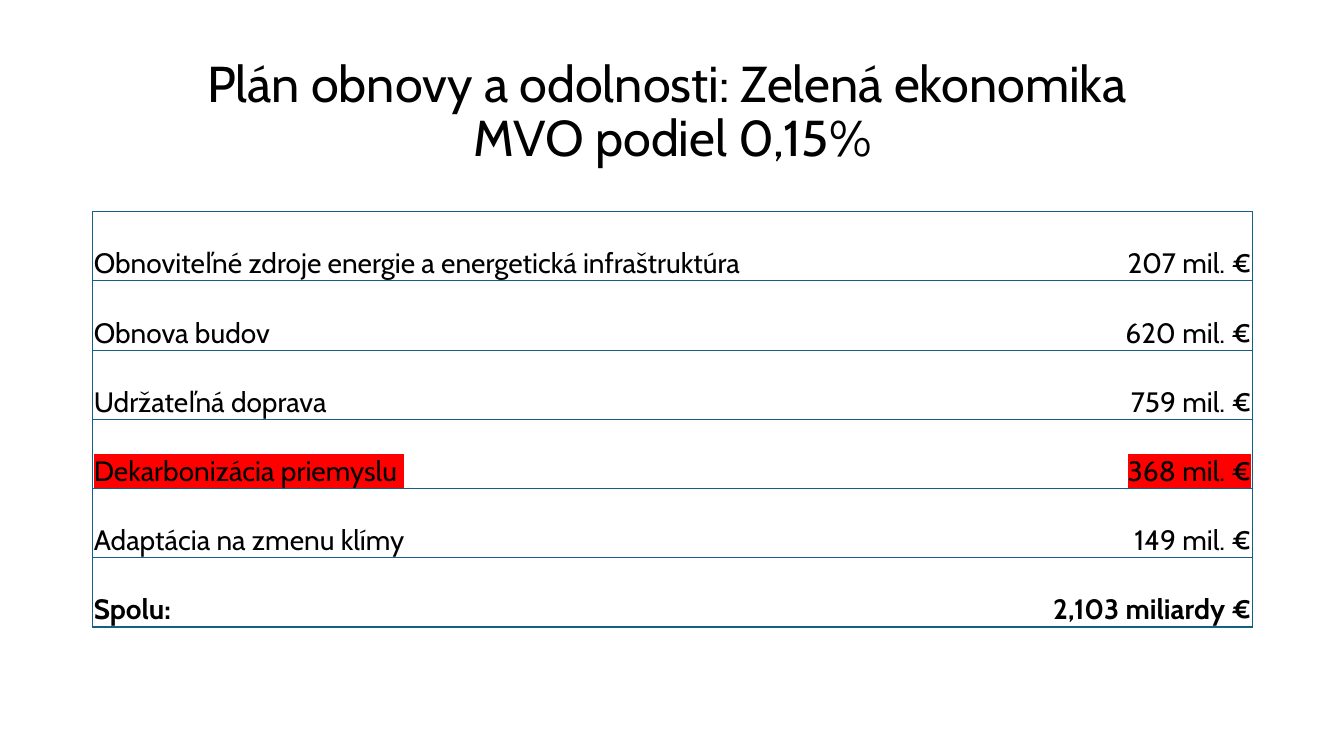
from dataclasses import dataclass

from lxml import etree
from pptx import Presentation
from pptx.dml.color import RGBColor
from pptx.enum.text import MSO_ANCHOR, PP_ALIGN
from pptx.oxml.ns import qn
from pptx.slide import Slide
from pptx.table import _Cell
from pptx.text.text import _Paragraph, _Run
from pptx.util import Inches, Pt

CENTER, LEFT, RIGHT = PP_ALIGN.CENTER, PP_ALIGN.LEFT, PP_ALIGN.RIGHT
MIDDLE, BOTTOM = MSO_ANCHOR.MIDDLE, MSO_ANCHOR.BOTTOM

BLACK = RGBColor(0x00, 0x00, 0x00)
WHITE = RGBColor(0xFF, 0xFF, 0xFF)
RED = RGBColor(0xFF, 0x00, 0x00)
TEAL = RGBColor(0x15, 0x60, 0x82)
FONT = "Cabin"

MARGIN_LEFT = 0.92
CONTENT_WIDTH = 11.5
COLUMN_WIDTHS = (8.85, 2.65)
TABLE_TOP, TABLE_HEIGHT = 2.1, 4.12


@dataclass
class BudgetRow:
    area: str
    amount: str
    highlighted: bool = False
    bold: bool = False


TITLE_LINES = ("Plán obnovy a odolnosti: Zelená ekonomika ", "MVO podiel 0,15%")
BUDGET = (
    BudgetRow("Obnoviteľné zdroje energie a energetická infraštruktúra", "207 mil. €"),
    BudgetRow("Obnova budov", "620 mil. €"),
    BudgetRow("Udržateľná doprava", "759 mil. €"),
    BudgetRow("Dekarbonizácia priemyslu ", "368 mil. €", highlighted=True),
    BudgetRow("Adaptácia na zmenu klímy", "149 mil. €"),
    BudgetRow("Spolu:", "2,103 miliardy €", bold=True),
)


def add_run(paragraph: _Paragraph, text: str, size: int, bold: bool = False) -> _Run:
    run = paragraph.add_run()
    run.text = text
    run.font.name = FONT
    run.font.size = Pt(size)
    run.font.bold = bold
    run.font.color.rgb = BLACK
    return run


def highlight(run: _Run, color: RGBColor) -> None:
    mark = etree.Element(qn("a:highlight"))
    etree.SubElement(mark, qn("a:srgbClr"), val=str(color))
    run.font._element.find(qn("a:solidFill")).addnext(mark)


def set_borders(cell: _Cell, visible_sides: str) -> None:
    properties = cell._tc.get_or_add_tcPr()
    for side in "LRTB":
        line = etree.SubElement(properties, qn(f"a:ln{side}"), w=str(Pt(1)))
        if side in visible_sides:
            fill = etree.SubElement(line, qn("a:solidFill"))
            etree.SubElement(fill, qn("a:srgbClr"), val=str(TEAL))
        else:
            etree.SubElement(line, qn("a:noFill"))


def fill_cell(cell: _Cell, text: str, row: BudgetRow, alignment: PP_ALIGN, sides: str) -> None:
    set_borders(cell, sides)
    cell.fill.solid()
    cell.fill.fore_color.rgb = WHITE
    cell.vertical_anchor = BOTTOM
    cell.margin_left = cell.margin_right = cell.margin_top = Inches(0.01)
    cell.margin_bottom = 0
    paragraph = cell.text_frame.paragraphs[0]
    paragraph.alignment = alignment
    run = add_run(paragraph, text, 20, row.bold)
    if row.highlighted:
        highlight(run, RED)


def add_title(slide: Slide) -> None:
    box = slide.shapes.add_textbox(
        Inches(MARGIN_LEFT), Inches(0.4), Inches(CONTENT_WIDTH), Inches(1.45)
    )
    frame = box.text_frame
    frame.word_wrap = True
    frame.vertical_anchor = MIDDLE
    paragraph = frame.paragraphs[0]
    paragraph.alignment = CENTER
    paragraph.line_spacing = 0.9
    for index, line in enumerate(TITLE_LINES):
        if index:
            paragraph.add_line_break()
        add_run(paragraph, line, 36)


def add_budget_table(slide: Slide) -> None:
    table = slide.shapes.add_table(
        len(BUDGET), len(COLUMN_WIDTHS), Inches(MARGIN_LEFT), Inches(TABLE_TOP),
        Inches(CONTENT_WIDTH), Inches(TABLE_HEIGHT),
    ).table
    table.first_row = False
    table.horz_banding = False
    for column, width in zip(table.columns, COLUMN_WIDTHS):
        column.width = Inches(width)
    for index, row in enumerate(BUDGET):
        fill_cell(table.cell(index, 0), row.area, row, LEFT, "LTB")
        fill_cell(table.cell(index, 1), row.amount, row, RIGHT, "RTB")


def main() -> None:
    presentation = Presentation()
    presentation.slide_width = Inches(13.33)
    presentation.slide_height = Inches(7.5)
    slide = presentation.slides.add_slide(presentation.slide_layouts[6])
    add_title(slide)
    add_budget_table(slide)
    presentation.save("out.pptx")


if __name__ == "__main__":
    main()
